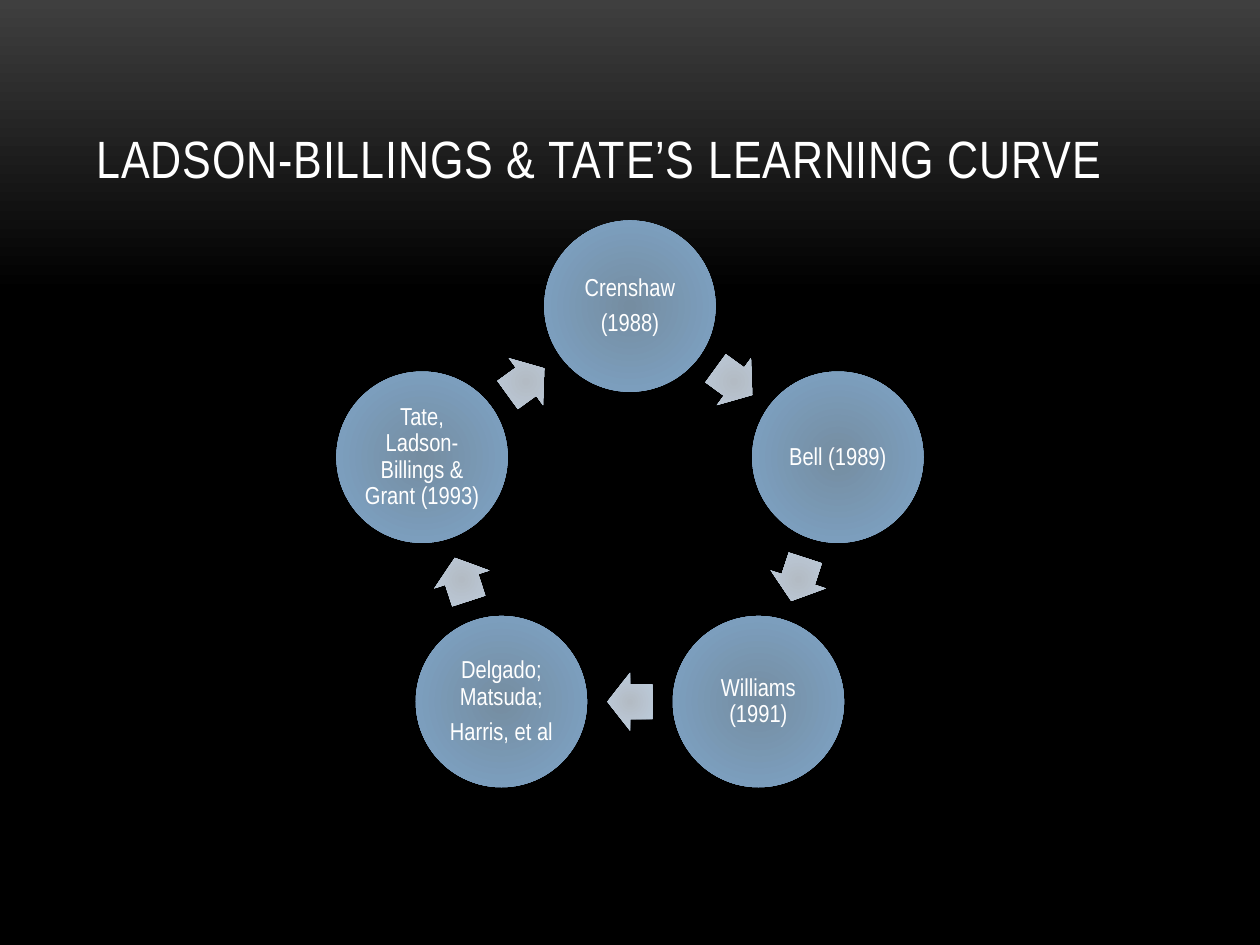
from math import cos, radians, sin

from lxml import etree
from pptx import Presentation
from pptx.dml.color import RGBColor
from pptx.enum.shapes import MSO_SHAPE
from pptx.enum.text import MSO_ANCHOR, PP_ALIGN
from pptx.oxml.ns import qn
from pptx.util import Inches, Pt

ELLIPSE, ARROW = MSO_SHAPE.OVAL, MSO_SHAPE.RIGHT_ARROW
MIDDLE, BOTTOM = MSO_ANCHOR.MIDDLE, MSO_ANCHOR.BOTTOM
CENTER = PP_ALIGN.CENTER

TITLE = "LADSON-BILLINGS & TATE’S LEARNING CURVE"
SCHOLARS = [
    ["Crenshaw", "(1988)"],
    ["Bell (1989)"],
    ["Williams (1991)"],
    ["Delgado; Matsuda;", "Harris, et al"],
    ["Tate, Ladson-Billings & Grant (1993)"],
]

FONT = "Arial Narrow"
WHITE = RGBColor(0xFF, 0xFF, 0xFF)
BLACK = RGBColor(0x00, 0x00, 0x00)
CHARCOAL = RGBColor(0x3F, 0x3F, 0x3F)
NODE_COLORS = RGBColor(0x75, 0x8D, 0xA1), RGBColor(0x7F, 0xA6, 0xCA)
ARROW_COLORS = RGBColor(0xB3, 0xBB, 0xC4), RGBColor(0xBF, 0xCF, 0xE0)

WIDTH, HEIGHT = 10, 7.5
CX, CY, RADIUS = WIDTH / 2, 4.165, 1.735
NODE = 1.36
ARROW_W, ARROW_H = 0.36, 0.46
STEP = 360 / len(SCHOLARS)
ARROW_RADIUS = RADIUS * cos(radians(STEP / 2))


def set_stops(fill, colors, last=1.0):
    fill.gradient()
    for stop, color, position in zip(fill.gradient_stops, colors, (0, last)):
        stop.color.rgb = color
        stop.position = position


def add_radial(shapes, kind, angle, radius, w, h, colors):
    x = CX + radius * sin(radians(angle))
    y = CY - radius * cos(radians(angle))
    sp = shapes.add_shape(kind, Inches(x - w / 2), Inches(y - h / 2),
                          Inches(w), Inches(h))
    sp.shadow.inherit = False
    sp.line.fill.background()
    set_stops(sp.fill, colors)
    grad = sp._element.spPr.find(qn("a:gradFill"))
    grad.remove(grad.find(qn("a:lin")))
    circle = etree.SubElement(grad, qn("a:path"), path="circle")
    etree.SubElement(circle, qn("a:fillToRect"),
                     {side: "100000" for side in "ltrb"})
    return sp


def add_run(p, text, size):
    r = p.add_run()
    r.text = text
    r.font.name = FONT
    r.font.size = Pt(size)
    r.font.color.rgb = WHITE
    return r


prs = Presentation()
prs.slide_width, prs.slide_height = Inches(WIDTH), Inches(HEIGHT)
s = prs.slides.add_slide(prs.slide_layouts[6])
background = s.background.fill
set_stops(background, (CHARCOAL, BLACK), 0.31)
background.gradient_angle = 270

title = s.shapes.add_textbox(Inches(WIDTH / 15), Inches(0.3),
                             Inches(WIDTH * 13 / 15), Inches(1.25))
tf = title.text_frame
tf.word_wrap = True
tf.vertical_anchor = BOTTOM
r = add_run(tf.paragraphs[0], TITLE, 30)
r.font._element.set("spc", "50")

for i, lines in enumerate(SCHOLARS):
    angle = i * STEP
    node = add_radial(s.shapes, ELLIPSE, angle, RADIUS, NODE, NODE, NODE_COLORS)
    tf = node.text_frame
    tf.word_wrap = True
    tf.vertical_anchor = MIDDLE
    tf.margin_left = tf.margin_right = Inches(0.02)
    tf.margin_top = tf.margin_bottom = Inches(0.02)
    for j, line in enumerate(lines):
        p = tf.add_paragraph() if j else tf.paragraphs[0]
        p.alignment = CENTER
        p.line_spacing = 0.9
        p.space_after = Pt(4.9)
        add_run(p, line, 14)

    middle = angle + STEP / 2
    arrow = add_radial(s.shapes, ARROW, middle, ARROW_RADIUS,
                       ARROW_W, ARROW_H, ARROW_COLORS)
    arrow.rotation = middle
    arrow.adjustments[0] = 0.6
    arrow.adjustments[1] = 0.5

prs.save("out.pptx")
